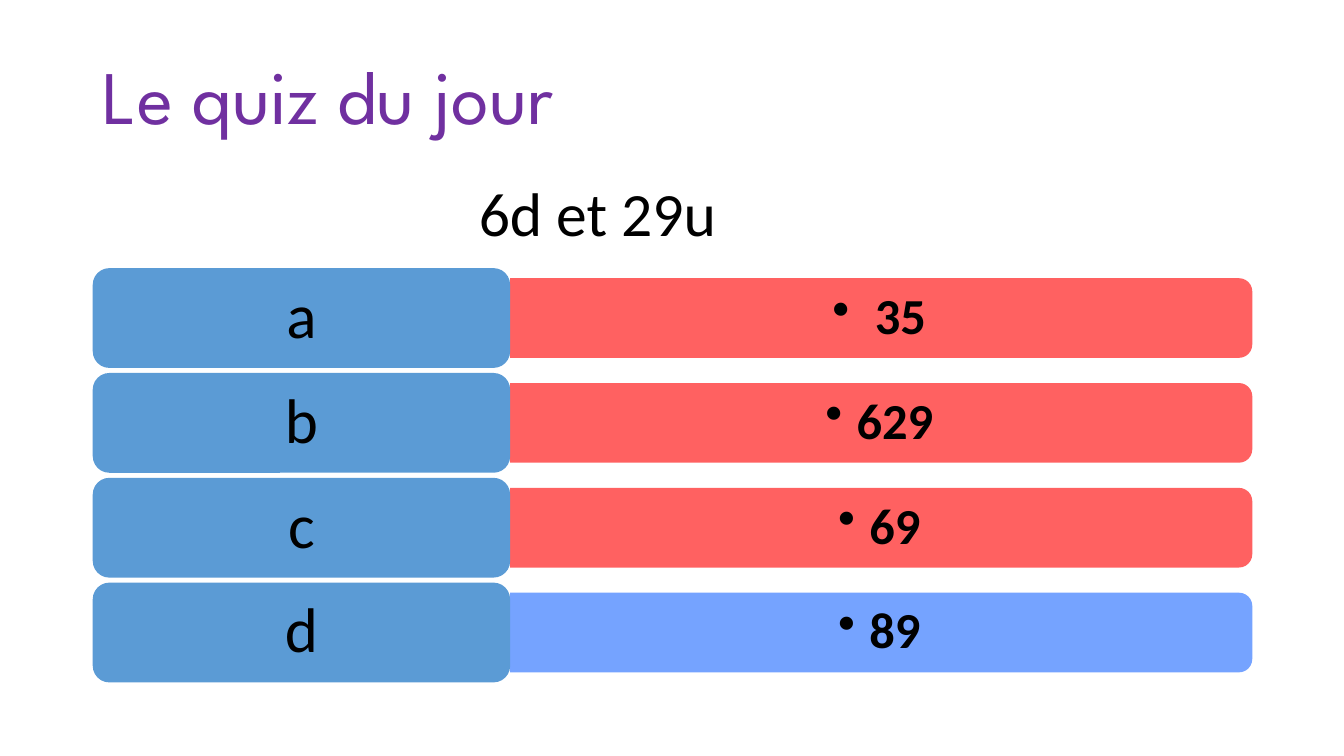
"""Build the quiz slide with four lettered answers."""
from dataclasses import dataclass

from lxml import etree
from pptx import Presentation
from pptx.dml.color import RGBColor
from pptx.enum.shapes import MSO_SHAPE
from pptx.enum.text import MSO_ANCHOR, PP_ALIGN
from pptx.oxml.ns import qn
from pptx.util import Inches, Pt

ROUNDED = MSO_SHAPE.ROUNDED_RECTANGLE
ROUND_TOP = MSO_SHAPE.ROUND_2_SAME_RECTANGLE
MIDDLE = MSO_ANCHOR.MIDDLE
LEFT, CENTER = PP_ALIGN.LEFT, PP_ALIGN.CENTER

TITLE = "Le quiz du jour"
QUESTION = "6d et 29u"
ANSWERS = [
    ("a", " 35", "red"),
    ("b", "629", "red"),
    ("c", "69", "red"),
    ("d", "89", "blue"),
]


@dataclass(frozen=True)
class Theme:
    """Fonts, colours and type sizes."""
    title_font: str = "League Spartan"
    body_font: str = "Calibri"
    purple: str = "7030A0"
    black: str = "000000"
    label: str = "5B9BD5"
    red: str = "FF5050"
    blue: str = "6699FF"
    title_size: int = 54
    question_size: int = 44
    label_size: int = 45
    answer_size: int = 36
    bar_opacity: int = 90


THEME = Theme()
LABEL_X, FIRST_Y, LABEL_W, LABEL_H, GAP = 0.92, 2.66, 4.14, 0.99, 0.05
BAR_W, BAR_H = 7.36, 0.79
TEXT_W, TEXT_H = 7.32, 0.71


def write(shape, text, size, color, font=THEME.body_font, align=LEFT, bold=False, spacing=1.0):
    """Fill a shape with one formatted paragraph."""
    tf = shape.text_frame
    tf.text = text
    tf.word_wrap = True
    p = tf.paragraphs[0]
    p.alignment = align
    p.line_spacing = spacing
    p.font.name = font
    p.font.size = Pt(size)
    p.font.bold = bold
    p.font.color.rgb = RGBColor.from_string(color)
    return p


def set_margins(shape, side, end):
    """Centre the text vertically within the given margins."""
    tf = shape.text_frame
    tf.vertical_anchor = MIDDLE
    tf.margin_left = tf.margin_right = Inches(side)
    tf.margin_top = tf.margin_bottom = Inches(end)


def add_block(s, kind, x, y, w, h, color):
    """Add a plain filled shape."""
    sp = s.shapes.add_shape(kind, Inches(x), Inches(y), Inches(w), Inches(h))
    sp.shadow.inherit = False
    sp.fill.solid()
    sp.fill.fore_color.rgb = RGBColor.from_string(color)
    sp.line.fill.background()
    return sp


def set_opacity(sp, percent):
    """Make the fill partly transparent."""
    color = sp.fill._xPr.find(qn("a:solidFill"))[0]
    etree.SubElement(color, qn("a:alpha")).set("val", str(percent * 1000))


def set_bullet(p, indent):
    """Give the paragraph a hanging round bullet."""
    pPr = p._p.get_or_add_pPr()
    pPr.set("marL", str(Inches(indent)))
    pPr.set("indent", str(-Inches(indent)))
    bullet = etree.Element(qn("a:buChar"), char="•")
    pPr.find(qn("a:defRPr")).addprevious(bullet)


def add_answer(s, row, letter, answer, color):
    """Add one answer bar with its letter label."""
    y = FIRST_Y + row * (LABEL_H + GAP)
    middle = y + LABEL_H / 2
    bar_x = LABEL_X + LABEL_W
    bar = add_block(s, ROUND_TOP, bar_x + (BAR_W - BAR_H) / 2, middle - BAR_W / 2,
                    BAR_H, BAR_W, getattr(THEME, color))
    bar.rotation = 90
    set_opacity(bar, THEME.bar_opacity)

    box = s.shapes.add_textbox(Inches(bar_x), Inches(middle - TEXT_H / 2),
                               Inches(TEXT_W), Inches(TEXT_H))
    p = write(box, answer, THEME.answer_size, THEME.black, align=CENTER, bold=True, spacing=0.9)
    set_bullet(p, 0.31)
    set_margins(box, 0.15, 0.07)

    label = add_block(s, ROUNDED, LABEL_X, y, LABEL_W, LABEL_H, THEME.label)
    write(label, letter, THEME.label_size, THEME.black, align=CENTER, spacing=0.9)
    set_margins(label, 0.23, 0.14)


def main():
    """Create and save the presentation."""
    prs = Presentation()
    prs.slide_width, prs.slide_height = Inches(13.33), Inches(7.5)
    s = prs.slides.add_slide(prs.slide_layouts[5])

    title = s.shapes.title
    title.left, title.top = Inches(0.92), Inches(0.27)
    title.width, title.height = Inches(11.5), Inches(1.45)
    write(title, TITLE, THEME.title_size, THEME.purple, THEME.title_font, spacing=0.9)
    set_margins(title, 0.1, 0.05)

    for row, (letter, answer, color) in enumerate(ANSWERS):
        add_answer(s, row, letter, answer, color)

    question = s.shapes.add_textbox(Inches(4.65), Inches(1.69), Inches(3.32), Inches(0.84))
    write(question, QUESTION, THEME.question_size, THEME.black)
    prs.save("out.pptx")


if __name__ == "__main__":
    main()
